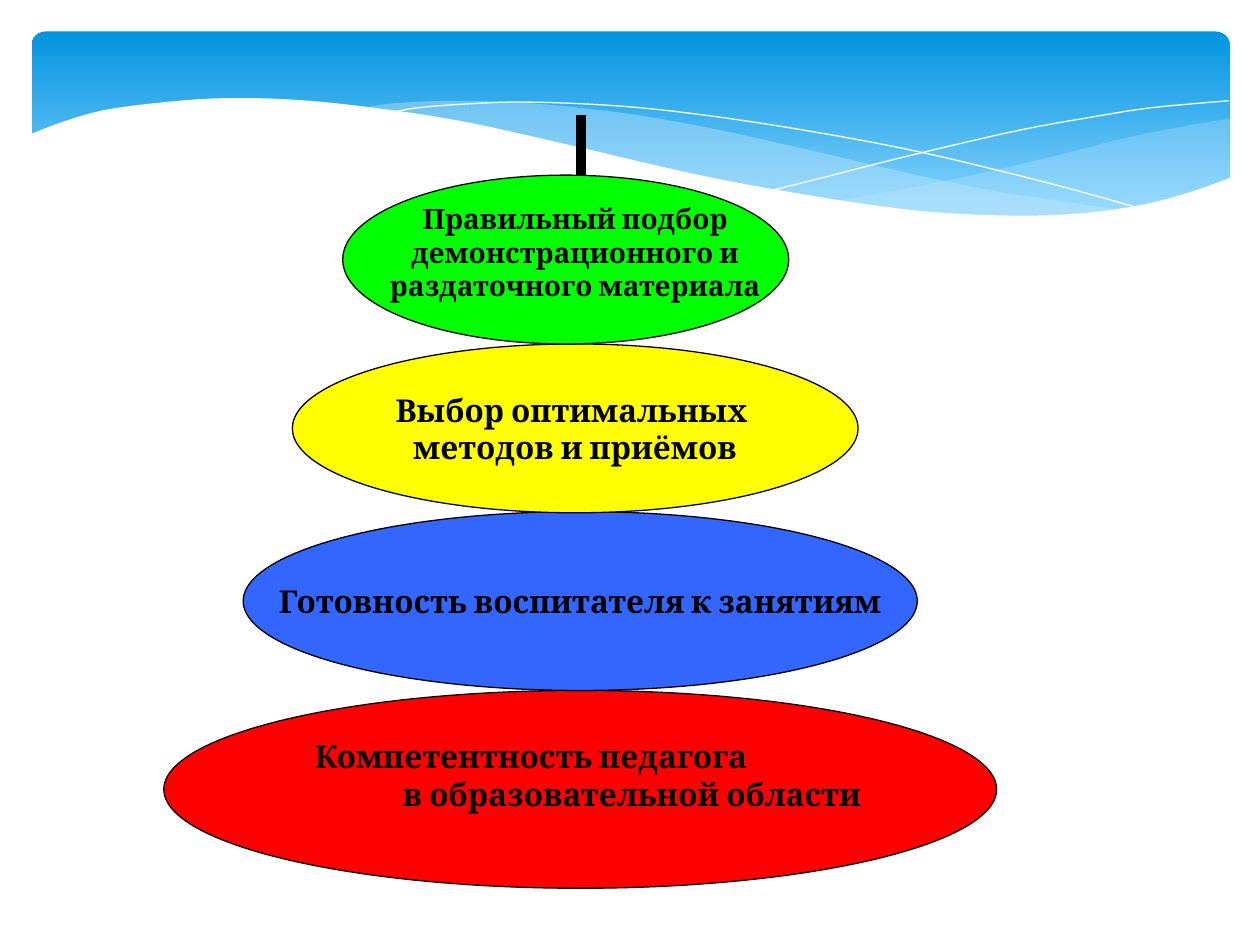
from pptx import Presentation
from pptx.dml.color import RGBColor
from pptx.enum.shapes import MSO_CONNECTOR, MSO_SHAPE
from pptx.enum.text import MSO_ANCHOR, PP_ALIGN
from pptx.oxml.ns import qn
from pptx.util import Inches, Pt
from lxml import etree

OVAL = MSO_SHAPE.OVAL
ROUNDED = MSO_SHAPE.ROUNDED_RECTANGLE
STRAIGHT = MSO_CONNECTOR.STRAIGHT
MIDDLE = MSO_ANCHOR.MIDDLE
CENTER = PP_ALIGN.CENTER
LEFT = PP_ALIGN.LEFT

FONT = "Cambria"
COLORS = {
    "sky_top": "0293E0",
    "sky_bottom": "83D3FE",
    "veil": "C6E7FC",
    "white": "FFFFFF",
    "black": "000000",
    "red": "FF0000",
    "blue": "3366FF",
    "yellow": "FFFF00",
    "green": "00FF00",
}

RIGHT_VEIL = [
    [(9.76, 0.94), (9.35, 1.01), (8.91, 1.1), (8.32, 1.25), (7.53, 1.43), (6.61, 1.6)],
    [(6.61, 1.6), (7.05, 1.65), (7.57, 1.7), (8.14, 1.72), (8.63, 1.7),
     (9.05, 1.63), (9.42, 1.54), (9.76, 1.41)],
]
LONG_VEIL = [
    [(8.93, 1.67), (8.37, 1.59), (7.75, 1.49), (7.06, 1.34), (6.29, 1.16), (5.55, 1),
     (4.89, 0.89), (4.2, 0.82), (3.61, 0.8), (3.13, 0.82), (2.86, 0.86)],
    [(2.86, 0.86), (3.42, 0.94), (4.04, 1.06), (4.91, 1.26), (5.66, 1.43), (6.34, 1.56),
     (6.95, 1.65), (7.48, 1.7), (8.07, 1.73), (8.57, 1.71), (8.93, 1.67)],
]
FALLING_CURVE = [
    [(3.09, 0.9), (3.28, 0.86), (3.63, 0.83), (4.16, 0.81), (4.89, 0.84), (5.56, 0.91),
     (6.36, 1.03), (7.27, 1.2), (8.31, 1.45), (9.07, 1.66)],
]
RISING_CURVE = [
    [(6.13, 1.51), (6.53, 1.41), (7.2, 1.24), (8.06, 1.04), (8.66, 0.93),
     (9.1, 0.86), (9.51, 0.82), (9.75, 0.8)],
]
WHITE_WAVE = [
    [(9.77, 1.41), (9.4, 1.54), (8.99, 1.64), (8.5, 1.7), (7.93, 1.71), (7.26, 1.67),
     (6.48, 1.56), (5.55, 1.39), (4.47, 1.14), (3.65, 0.96), (2.92, 0.85), (2.3, 0.79),
     (1.77, 0.78), (1.32, 0.81), (0.85, 0.87), (0.52, 0.96), (0.23, 1.07)],
    [(0.23, 2.24), (9.77, 2.24)],
]


def color(name):
    return RGBColor.from_string(COLORS[name])


def smooth_edge(knots, steps=6):
    padded = [knots[0], *knots, knots[-1]]
    points = [knots[0]]
    for before, start, end, after in zip(padded, padded[1:], padded[2:], padded[3:]):
        for step in range(1, steps + 1):
            t = step / steps
            points.append(tuple(
                b + 0.5 * t * (c - a + t * (2 * a - 5 * b + 4 * c - d
                                            + t * (3 * (b - c) + d - a)))
                for a, b, c, d in zip(before, start, end, after)))
    return points


def add_curve(page, edges, closed):
    points = [(Inches(x), Inches(y)) for edge in edges for x, y in smooth_edge(edge)]
    builder = page.shapes.build_freeform(*points[0])
    builder.add_line_segments(points[1:], close=closed)
    curve = builder.convert_to_shape()
    curve.shadow.inherit = False
    return curve


def add_wave(page, edges, fill, opacity=100):
    wave = add_curve(page, edges, True)
    wave.fill.solid()
    wave.fill.fore_color.rgb = color(fill)
    wave.line.fill.background()
    if opacity < 100:
        tint = wave.fill._xPr.find(".//" + qn("a:srgbClr"))
        etree.SubElement(tint, qn("a:alpha"), val=str(opacity * 1000))


def add_hairline(page, edges):
    hairline = add_curve(page, edges, False)
    hairline.fill.background()
    hairline.line.color.rgb = color("white")
    hairline.line.width = Pt(0)


def add_banner(page):
    banner = page.shapes.add_shape(
        ROUNDED, Inches(0.25), Inches(0.25), Inches(9.51), Inches(1.56))
    banner.adjustments[0] = 0.071
    banner.shadow.inherit = False
    banner.line.fill.background()
    banner.fill.gradient()
    banner.fill.gradient_angle = 270
    stops = banner.fill.gradient_stops
    for stop, name, position in zip(stops, ("sky_top", "sky_bottom"), (0, 0.9)):
        stop.color.rgb = color(name)
        stop.position = position


def write_lines(frame, lines, size, align=CENTER):
    frame.text = "\n".join(lines)
    for para in frame.paragraphs:
        para.alignment = align
        for span in para.runs:
            span.font.name = FONT
            span.font.size = Pt(size)
            span.font.bold = True
            span.font.color.rgb = color("black")


def add_ring(page, left, top, width, height, fill, lines=()):
    ring = page.shapes.add_shape(
        OVAL, Inches(left), Inches(top), Inches(width), Inches(height))
    ring.shadow.inherit = False
    ring.fill.solid()
    ring.fill.fore_color.rgb = color(fill)
    ring.line.color.rgb = color("black")
    ring.line.width = Pt(0.75)
    if lines:
        ring.text_frame.word_wrap = False
        ring.text_frame.vertical_anchor = MIDDLE
        write_lines(ring.text_frame, lines, 18)


def add_label(page, left, top, width, height, lines, size, align=CENTER):
    box = page.shapes.add_textbox(
        Inches(left), Inches(top), Inches(width), Inches(height))
    box.text_frame.word_wrap = True
    write_lines(box.text_frame, lines, size, align)
    return box


def add_rod(page):
    rod = page.shapes.add_connector(
        STRAIGHT, Inches(4.61), Inches(0.91), Inches(4.61), Inches(5.48))
    rod.line.color.rgb = color("black")
    rod.line.width = Pt(6)
    etree.SubElement(rod._element.spPr, qn("a:effectLst"))


def add_header(page):
    add_banner(page)
    add_wave(page, RIGHT_VEIL, "veil", 29)
    add_wave(page, LONG_VEIL, "veil", 40)
    add_hairline(page, FALLING_CURVE)
    add_hairline(page, RISING_CURVE)
    add_wave(page, WHITE_WAVE, "white")


def add_pyramid(page):
    add_ring(page, 1.3, 5.48, 6.61, 1.57, "red")
    add_rod(page)
    base = add_label(page, 2.4, 5.8, 4.96, 0.71,
                     ["Компетентность педагога", "в образовательной области"], 18, LEFT)
    second_line = base.text_frame.paragraphs[1]
    second_line._p.get_or_add_pPr().set("marL", str(Inches(0.7)))
    add_ring(page, 1.93, 4.06, 5.35, 1.42, "blue", ["Готовность воспитателя к занятиям"])
    add_ring(page, 2.32, 2.73, 4.49, 1.34, "yellow",
             ["Выбор оптимальных ", "методов и приёмов"])
    add_ring(page, 2.72, 1.39, 3.54, 1.34, "green")
    add_label(page, 2.87, 1.55, 3.39, 0.9,
              ["Правильный подбор демонстрационного и раздаточного материала"], 16)


def main():
    deck = Presentation()
    deck.slide_width = Inches(10)
    deck.slide_height = Inches(7.5)
    page = deck.slides.add_slide(deck.slide_layouts[6])
    add_header(page)
    add_pyramid(page)
    deck.save("out.pptx")


if __name__ == "__main__":
    main()
